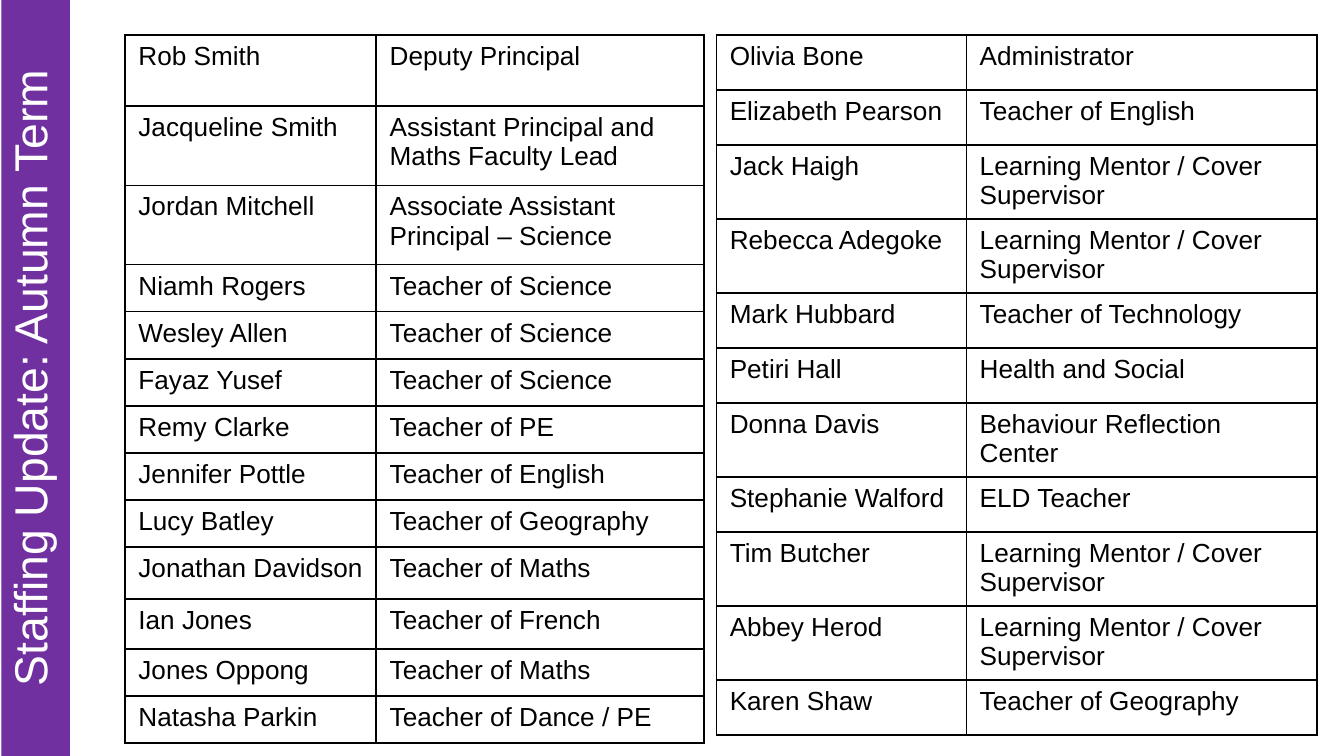
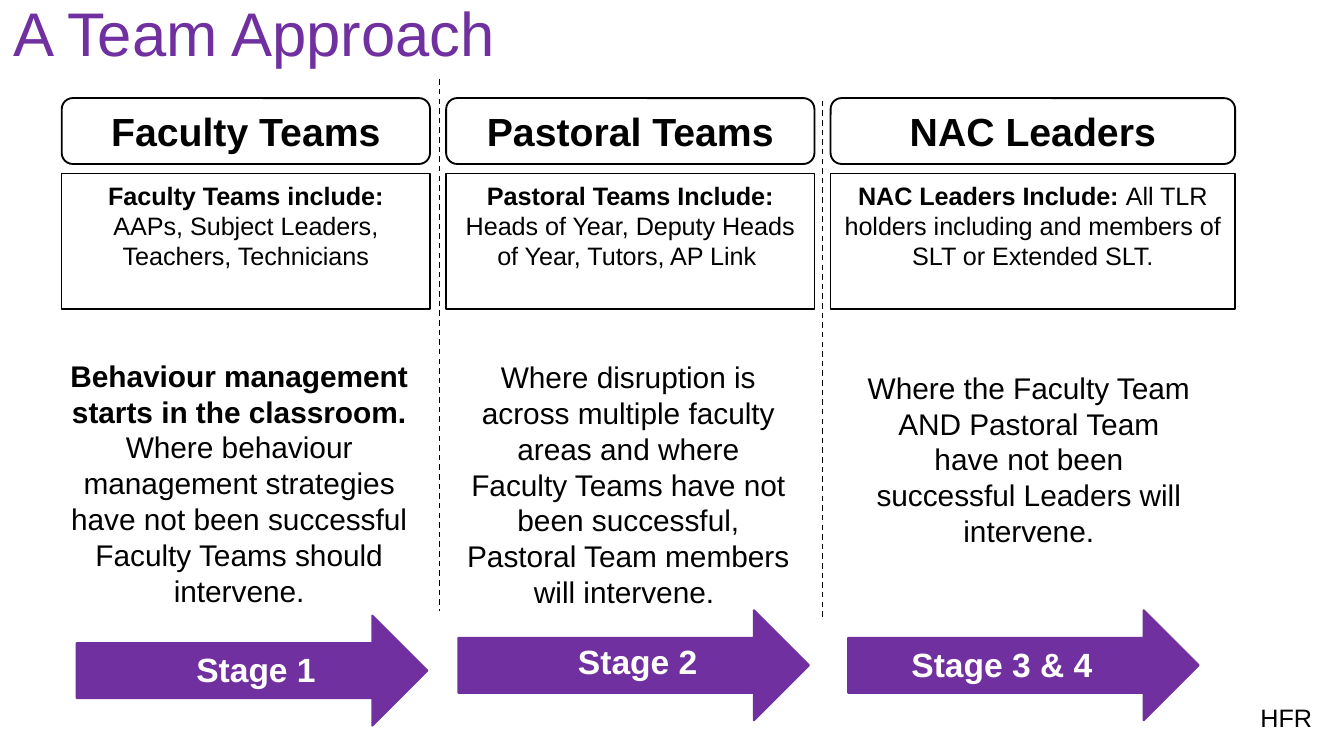
from dataclasses import dataclass

from lxml.etree import SubElement
from pptx import Presentation
from pptx.dml.color import RGBColor
from pptx.enum.dml import MSO_LINE
from pptx.enum.shapes import MSO_CONNECTOR, MSO_SHAPE as SHAPE
from pptx.enum.text import MSO_ANCHOR as ANCHOR, MSO_AUTO_SIZE as AUTO, PP_ALIGN as ALIGN
from pptx.oxml.ns import qn
from pptx.util import Inches, Pt


@dataclass(frozen=True)
class Theme:
    """Colours, font and type sizes shared by the slides."""
    purple: RGBColor = RGBColor(0x70, 0x30, 0xA0)
    black: RGBColor = RGBColor(0, 0, 0)
    white: RGBColor = RGBColor(255, 255, 255)
    font: str = "Arial"
    title: float = 33
    band: float = 24.8
    heading: float = 21
    stage: float = 18
    body: float = 16
    table: float = 14
    small: float = 13.5


THEME = Theme()
PAGE_WIDTH = 10
PAGE_HEIGHT = PAGE_WIDTH * 9 / 16
COVER = "Learning Mentor / Cover Supervisor"

SENIOR_STAFF = [
    ("Rob Smith", "Deputy Principal", 0.53),
    ("Jacqueline Smith", "Assistant Principal and Maths Faculty Lead", 0.59),
    ("Jordan Mitchell", "Associate Assistant Principal – Science", 0.59),
    ("Niamh Rogers", "Teacher of Science", 0.35),
    ("Wesley Allen", "Teacher of Science", 0.35),
    ("Fayaz Yusef", "Teacher of Science", 0.35),
    ("Remy Clarke", "Teacher of PE", 0.35),
    ("Jennifer Pottle", "Teacher of English", 0.35),
    ("Lucy Batley", "Teacher of Geography", 0.35),
    ("Jonathan Davidson", "Teacher of Maths", 0.39),
    ("Ian Jones", "Teacher of French", 0.37),
    ("Jones Oppong", "Teacher of Maths", 0.35),
    ("Natasha Parkin", "Teacher of Dance / PE", 0.35),
]
SUPPORT_STAFF = [
    ("Olivia Bone", "Administrator", 0.41),
    ("Elizabeth Pearson", "Teacher of English", 0.41),
    ("Jack Haigh", COVER, 0.55),
    ("Rebecca Adegoke", COVER, 0.55),
    ("Mark Hubbard", "Teacher of Technology", 0.41),
    ("Petiri Hall", "Health and Social", 0.41),
    ("Donna Davis", "Behaviour Reflection Center", 0.55),
    ("Stephanie Walford", "ELD Teacher", 0.41),
    ("Tim Butcher", COVER, 0.55),
    ("Abbey Herod", COVER, 0.55),
    ("Karen Shaw", "Teacher of Geography", 0.41),
]


@dataclass(frozen=True)
class Team:
    """One column of the team approach slide."""
    name: str
    left: float
    width: float
    include: str
    members: str
    lead: str
    action: str
    action_at: tuple
    stage: str
    arrow_at: tuple
    stage_at: tuple


TEAMS = [
    Team("Faculty Teams", 0.46, 2.74, "Faculty Teams include: ",
         "AAPs, Subject Leaders, Teachers, Technicians",
         "Behaviour management starts in the classroom. ",
         "Where behaviour management strategies have not been successful "
         "Faculty Teams should intervene.",
         (0.36, 2.61, 2.84, 1.99), "Stage 1", (0.57, 4.58), (0.4, 4.78)),
    Team("Pastoral Teams", 3.32, 2.74, "Pastoral Teams Include: ",
         "Heads of Year, Deputy Heads of Year, Tutors, AP Link ", "",
         "Where disruption is across multiple faculty areas and where Faculty Teams "
         "have not been successful, Pastoral Team members will intervene. ",
         (3.37, 2.62, 2.61, 1.99), "Stage 2", (3.41, 4.54), (3.24, 4.72)),
    Team("NAC Leaders", 6.18, 3.01, "NAC Leaders Include: ",
         "All TLR holders including and members of SLT or Extended SLT.", "",
         "Where the Faculty Team AND Pastoral Team have not been successful "
         "Leaders will intervene.",
         (6.35, 2.7, 2.61, 1.45), "Stage 3 & 4", (6.31, 4.54), (5.95, 4.74)),
]


def write(frame, spans, size, color=THEME.black, align=ALIGN.LEFT, spacing=None):
    """Write (text, bold) spans as the one paragraph of a text frame."""
    para = frame.paragraphs[0]
    para.alignment = align
    if spacing:
        para.line_spacing = spacing
    for text, bold in spans:
        span = para.add_run()
        span.text = text
        font = span.font
        font.name, font.size, font.bold = THEME.font, Pt(size), bold
        font.color.rgb = color


def add_title(page, text, at):
    """Place and format the title placeholder."""
    title = page.shapes.title
    title.left, title.top, title.width, title.height = map(Inches, at)
    frame = title.text_frame
    frame.word_wrap, frame.auto_size = True, AUTO.NONE
    frame.vertical_anchor = ANCHOR.MIDDLE
    write(frame, [(text, False)], THEME.title, THEME.purple, spacing=0.9)


def add_box(page, at, spans, size, color=THEME.black, align=ALIGN.CENTER):
    """Add a wrapping text box that grows with its text."""
    box = page.shapes.add_textbox(*map(Inches, at))
    box.text_frame.word_wrap = True
    box.text_frame.auto_size = AUTO.SHAPE_TO_FIT_TEXT
    write(box.text_frame, spans, size, color, align)


def add_panel(page, kind, at, line=None, width=1, fill=None):
    """Add a preset shape with an optional outline and fill."""
    panel = page.shapes.add_shape(kind, *map(Inches, at))
    panel.shadow.inherit = False
    for paint, color in ((panel.fill, fill), (panel.line.fill, line)):
        if color is None:
            paint.background()
        else:
            paint.solid()
            paint.fore_color.rgb = color
    if line is not None:
        panel.line.width = Pt(width)
    return panel


def add_text_panel(page, kind, at, line_width, spans, size, anchor):
    """Add an outlined shape that holds centred text."""
    panel = add_panel(page, kind, at, THEME.black, line_width)
    frame = panel.text_frame
    frame.word_wrap, frame.vertical_anchor = True, anchor
    write(frame, spans, size, align=ALIGN.CENTER)


def add_side_band(page, text):
    """Add the purple band with text that reads upwards."""
    band = add_panel(page, SHAPE.RECTANGLE, (0.01, 0, 0.51, PAGE_HEIGHT), fill=THEME.purple)
    frame = band.text_frame
    frame.word_wrap, frame.vertical_anchor = True, ANCHOR.MIDDLE
    band.element.txBody.bodyPr.set("vert", "vert270")
    write(frame, [(text, False)], THEME.band, THEME.white, ALIGN.CENTER, 0.7)


def add_divider(page, x, top, bottom):
    """Add a dashed vertical line."""
    divider = page.shapes.add_connector(
        MSO_CONNECTOR.STRAIGHT, *map(Inches, (x, top, x, bottom)))
    divider.line.color.rgb = THEME.black
    divider.line.width = Pt(0.75)
    divider.line.dash_style = MSO_LINE.DASH
    SubElement(divider.element.spPr, qn("a:effectLst"))


def add_borders(cell):
    """Draw a thin line on every side of a table cell."""
    properties = cell._tc.get_or_add_tcPr()
    for side in ("a:lnL", "a:lnR", "a:lnT", "a:lnB"):
        line = SubElement(properties, qn(side), w=str(Pt(1)))
        fill = SubElement(line, qn("a:solidFill"))
        SubElement(fill, qn("a:srgbClr"), val=str(THEME.black))


def add_staff_table(page, left, widths, staff):
    """Add a two-column table of names and roles."""
    height = sum(row[-1] for row in staff)
    table = page.shapes.add_table(
        len(staff), 2, *map(Inches, (left, 0.26, sum(widths), height))).table
    table.first_row = table.horz_banding = False
    for column, width in zip(table.columns, widths):
        column.width = Inches(width)
    for row, (name, role, row_height) in zip(table.rows, staff):
        row.height = Inches(row_height)
        for cell, text in zip(row.cells, (name, role)):
            add_borders(cell)
            cell.fill.background()
            write(cell.text_frame, [(text, False)], THEME.table)


def build_staffing(page):
    """Fill the staffing update slide."""
    add_staff_table(page, 0.93, (1.87, 2.44), SENIOR_STAFF)
    add_staff_table(page, 5.33, (1.86, 2.61), SUPPORT_STAFF)
    add_side_band(page, "Staffing Update: Autumn Term")


def build_team(page, team):
    """Add the heading, members, action and stage of one team."""
    add_text_panel(page, SHAPE.ROUNDED_RECTANGLE, (team.left, 0.73, team.width, 0.49), 1,
                   [(team.name, True)], THEME.heading, ANCHOR.MIDDLE)
    add_text_panel(page, SHAPE.RECTANGLE, (team.left, 1.29, team.width, 1.01), 0.75,
                   [(team.include, True), (team.members, False)], THEME.small, ANCHOR.TOP)
    lead = [(team.lead, True)] if team.lead else []
    add_box(page, team.action_at, lead + [(team.action, False)], THEME.body)
    add_panel(page, SHAPE.RIGHT_ARROW, (*team.arrow_at, 2.61, 0.82),
              THEME.purple, 1, THEME.purple)
    add_box(page, (*team.stage_at, 3.01, 0.4), [(team.stage, True)],
            THEME.stage, THEME.white)


def build_approach(page):
    """Fill the team approach slide."""
    add_title(page, "A Team Approach", (0, -0.27, 8.62, 1.09))
    for team in TEAMS:
        build_team(page, team)
    add_divider(page, 3.27, 0.59, 4.55)
    add_divider(page, 6.12, 0.75, 4.59)
    add_box(page, (9.28, 5.18, 0.72, 0.33), [("HFR", False)], THEME.small, align=ALIGN.LEFT)


def main():
    """Build and save the deck."""
    deck = Presentation()
    deck.slide_width, deck.slide_height = Inches(PAGE_WIDTH), Inches(PAGE_HEIGHT)
    title_only, blank = deck.slide_layouts[5], deck.slide_layouts[6]
    build_staffing(deck.slides.add_slide(blank))
    build_approach(deck.slides.add_slide(title_only))
    deck.save("out.pptx")


if __name__ == "__main__":
    main()
